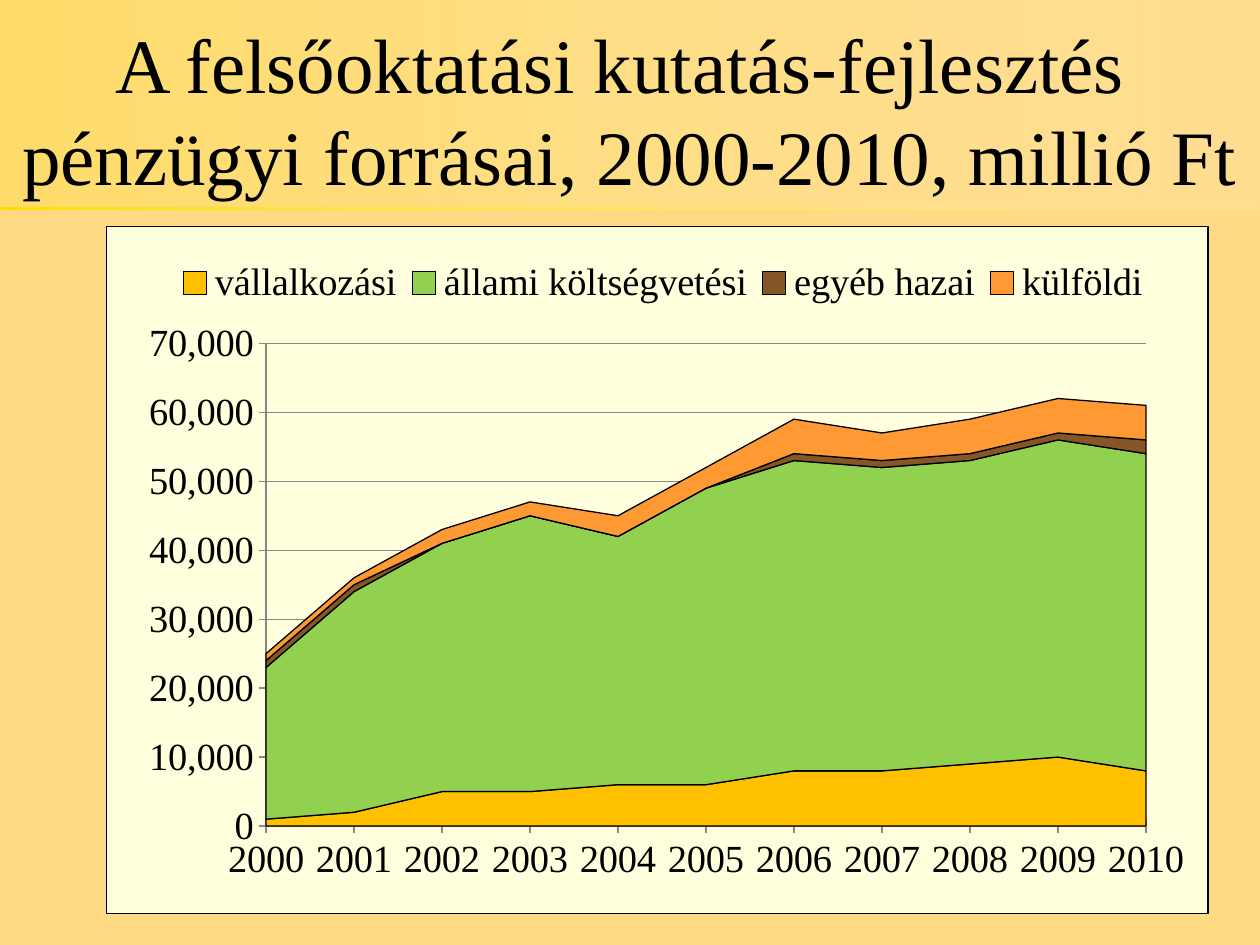
from lxml import etree
from pptx import Presentation
from pptx import util as u
from pptx.chart import data as chart_data
from pptx.dml import color
from pptx.enum import chart as chart_enum, shapes, text
from pptx.oxml import parse_xml
from pptx.oxml.ns import nsdecls, qn

COLORS = {
    "background": "FFDA84", "title": "FFDB95", "text": "000000",
    "band_start": "FEE002", "band_end": "FFFF99", "chart": "FFFFDD",
    "grid": "878787", "yellow": "FFC000", "green": "92D050",
    "brown": "875626", "orange": "FF9933",
}
YEARS = [str(year) for year in range(2000, 2011)]
SOURCES = [
    ("vállalkozási", "yellow",
     [1000, 2000, 5000, 5000, 6000, 6000, 8000, 8000, 9000, 10000, 8000]),
    ("állami költségvetési", "green",
     [22000, 32000, 36000, 40000, 36000, 43000, 45000, 44000, 44000, 46000, 46000]),
    ("egyéb hazai", "brown",
     [1000, 1000, 0, 0, 0, 0, 1000, 1000, 1000, 1000, 2000]),
    ("külföldi", "orange",
     [1000, 1000, 2000, 2000, 3000, 3000, 5000, 4000, 5000, 5000, 5000]),
]


def rgb(name):
    return color.RGBColor.from_string(COLORS[name])


def set_alpha(color_element, percent):
    etree.SubElement(color_element, qn("a:alpha")).set("val", str(percent * 1000))


class SlideBuilder:
    font = "Times New Roman"

    def __init__(self, presentation):
        self.slide = presentation.slides.add_slide(presentation.slide_layouts[5])
        background = self.slide.background.fill
        background.solid()
        background.fore_color.rgb = rgb("background")

    def style_font(self, font, size):
        font.name = self.font
        font.size = u.Pt(size)
        font.bold = False
        font.color.rgb = rgb("text")

    def style_line(self, line, name):
        line.color.rgb = rgb(name)
        line.width = u.Pt(0.75)

    def band(self, left, top, width, height):
        shape = self.slide.shapes.add_shape(
            shapes.MSO_SHAPE.RECTANGLE, *map(u.Pt, (left, top, width, height)))
        shape.shadow.inherit = False
        shape.line.fill.background()
        shape.fill.gradient()
        shape.fill.gradient_angle = 0
        for stop, name in zip(shape.fill.gradient_stops, ("band_start", "band_end")):
            stop.color.rgb = rgb(name)
        set_alpha(shape._element.spPr.findall(".//" + qn("a:srgbClr"))[-1], 30)
        self.slide.shapes.title._element.addprevious(shape._element)

    def title(self, lines, left, top, width, height):
        shape = self.slide.shapes.title
        shape.left, shape.top, shape.width, shape.height = map(
            u.Pt, (left, top, width, height))
        shape.fill.solid()
        shape.fill.fore_color.rgb = rgb("title")
        set_alpha(shape._element.spPr.find(".//" + qn("a:srgbClr")), 71)
        frame = shape.text_frame
        frame.word_wrap = True
        frame.auto_size = text.MSO_AUTO_SIZE.NONE
        frame.vertical_anchor = text.MSO_ANCHOR.BOTTOM
        paragraph = frame.paragraphs[0]
        paragraph.alignment = text.PP_ALIGN.CENTER
        for index, line in enumerate(lines):
            if index:
                paragraph.add_line_break()
            run = paragraph.add_run()
            run.text = line
            self.style_font(run.font, 44)

    def area_chart(self, categories, series_rows, left, top, width, height):
        values = chart_data.CategoryChartData(number_format="#,##0")
        values.categories = categories
        for name, _, numbers in series_rows:
            values.add_series(name, numbers)
        chart = self.slide.shapes.add_chart(
            chart_enum.XL_CHART_TYPE.AREA_STACKED,
            *map(u.Pt, (left, top, width, height)), values).chart
        self.style_font(chart.font, 22)
        chart.has_title = False
        chart.has_legend = True
        chart.legend.position = chart_enum.XL_LEGEND_POSITION.TOP
        chart.legend.include_in_layout = False
        for series, (_, fill_name, _) in zip(chart.plots[0].series, series_rows):
            series.format.fill.solid()
            series.format.fill.fore_color.rgb = rgb(fill_name)
            self.style_line(series.format.line, "text")
        for axis in (chart.category_axis, chart.value_axis):
            axis.major_tick_mark = chart_enum.XL_TICK_MARK.CROSS
            axis.minor_tick_mark = chart_enum.XL_TICK_MARK.NONE
            self.style_line(axis.format.line, "grid")
        chart.category_axis.has_major_gridlines = False
        axis = chart.value_axis
        axis.minimum_scale, axis.maximum_scale, axis.major_unit = 0, 70000, 10000
        axis.has_major_gridlines = True
        self.style_line(axis.major_gridlines.format.line, "grid")
        axis.tick_labels.number_format = "#,##0"
        axis.tick_labels.number_format_is_linked = False
        axis._element.find(qn("c:crossBetween")).set("val", "midCat")
        self.chart_frame(chart)
        plot_area = chart._chartSpace.find(".//" + qn("c:plotArea"))
        self.place(plot_area, 0, "inner", (width, height), (91.3, 66.8, 503.4, 276.4))
        self.place(chart.legend._element, 1, None, (width, height), (35, 16, 567, 32))

    def chart_frame(self, chart):
        chart._chartSpace.find(qn("c:chart")).addnext(parse_xml(
            f'<c:spPr {nsdecls("c", "a")}>'
            f'<a:solidFill><a:srgbClr val="{COLORS["chart"]}"/></a:solidFill>'
            f'<a:ln w="{u.Pt(0.75)}"><a:solidFill>'
            f'<a:srgbClr val="{COLORS["text"]}"/></a:solidFill></a:ln></c:spPr>'))

    def place(self, element, index, target, chart_size, box):
        for layout in element.findall(qn("c:layout")):
            element.remove(layout)
        target_tag = f'<c:layoutTarget val="{target}"/>' if target else ""
        sizes = "".join(f'<c:{key} val="{length / total:.4f}"/>'
                        for key, length, total in zip("xywh", box, chart_size * 2))
        element.insert(index, parse_xml(
            f'<c:layout {nsdecls("c")}><c:manualLayout>{target_tag}'
            f'<c:xMode val="edge"/><c:yMode val="edge"/>{sizes}'
            f'</c:manualLayout></c:layout>'))


def main():
    presentation = Presentation()
    presentation.slide_width = u.Pt(720)
    presentation.slide_height = u.Pt(540)
    builder = SlideBuilder(presentation)
    builder.band(0, 0, 720, 120)
    builder.title(["A felsőoktatási kutatás-fejlesztés ",
                   "pénzügyi forrásai, 2000-2010, millió Ft"], 0, 0, 720, 118.4)
    builder.area_chart(YEARS, SOURCES, 60.5, 129.2, 630.2, 393.4)
    presentation.save("out.pptx")


if __name__ == "__main__":
    main()
